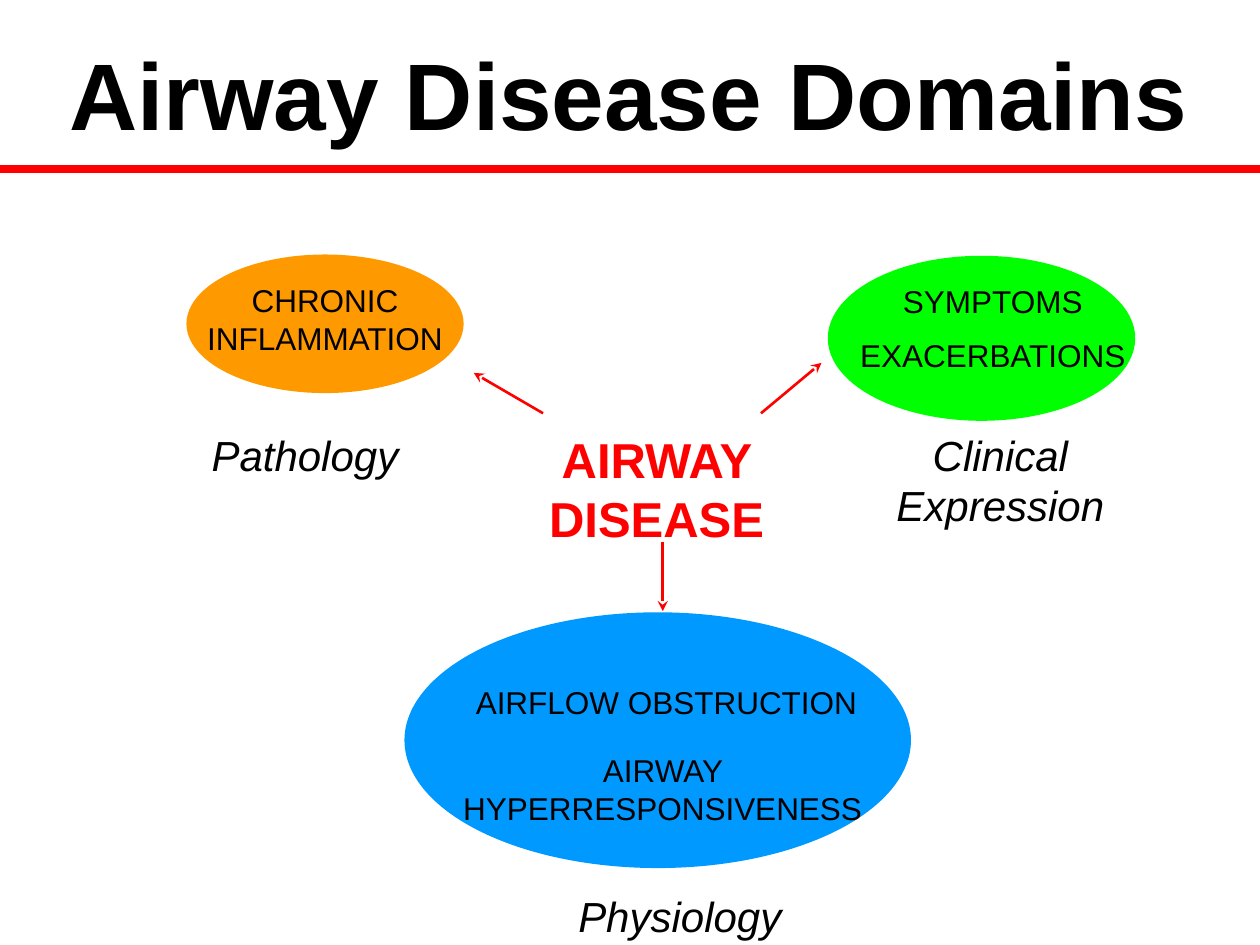
from dataclasses import dataclass

from lxml.etree import SubElement
from pptx import Presentation
from pptx.dml.color import RGBColor as RGB
from pptx.enum.shapes import MSO_CONNECTOR as CONNECTOR, MSO_SHAPE as SHAPE
from pptx.enum.text import MSO_ANCHOR as ANCHOR, MSO_AUTO_SIZE as AUTO, PP_ALIGN as ALIGN
from pptx.oxml.ns import qn
from pptx.util import Inches, Pt


@dataclass(frozen=True)
class Theme:
    font: str = "Arial"
    ink: RGB = RGB(0, 0, 0)
    accent: RGB = RGB(255, 0, 0)
    pathology: RGB = RGB(255, 153, 0)
    physiology: RGB = RGB(0, 153, 255)
    clinical: RGB = RGB(0, 255, 0)
    title: int = 54
    hub: int = 28
    caption: int = 24
    body: int = 18
    rule: float = 4.5
    arrow: float = 1.5


class DomainSlide:
    def __init__(self, slide, theme):
        self.slide = slide
        self.theme = theme

    def text(self, box, paragraphs, size, color=None, bold=False, italic=False,
             align=ALIGN.CENTER, parent=None):
        shapes = (parent or self.slide).shapes
        frame = shapes.add_textbox(*map(Inches, box)).text_frame
        frame.word_wrap = True
        frame.auto_size = AUTO.SHAPE_TO_FIT_TEXT
        frame.text = "\n".join(paragraphs)
        for index, paragraph in enumerate(frame.paragraphs):
            paragraph.alignment = align
            if index:
                paragraph.space_before = Pt(size / 2)
            font = paragraph.font
            font.name, font.size = self.theme.font, Pt(size)
            font.bold, font.italic = bold, italic
            font.color.rgb = color or self.theme.ink
        return frame

    def title(self, box, words):
        frame = self.text(box, [words], self.theme.title, bold=True, align=ALIGN.LEFT)
        frame.auto_size = AUTO.NONE
        frame.vertical_anchor = ANCHOR.BOTTOM
        frame.paragraphs[0].line_spacing = 0.75

    def line(self, start, end, width, arrow=False):
        line = self.slide.shapes.add_connector(
            CONNECTOR.STRAIGHT, *map(Inches, (*start, *end)))
        line.line.color.rgb = self.theme.accent
        line.line.width = Pt(width)
        if arrow:
            SubElement(line.line._get_or_add_ln(), qn("a:tailEnd"), type="stealth")
        SubElement(line._element.spPr, qn("a:effectLst"))

    def domain(self, oval_box, color, labels, caption_box, caption):
        """Group an oval, its (box, paragraphs) labels and its caption."""
        group = self.slide.shapes.add_group_shape()
        oval = group.shapes.add_shape(SHAPE.OVAL, *map(Inches, oval_box))
        oval.shadow.inherit = False
        oval.fill.solid()
        oval.fill.fore_color.rgb = color
        oval.line.fill.background()
        for box, paragraphs in labels:
            self.text(box, paragraphs, self.theme.body, parent=group)
        self.text(caption_box, [caption], self.theme.caption, italic=True, parent=group)


def main():
    deck = Presentation()
    deck.slide_width, deck.slide_height = Inches(10), Inches(7.5)
    theme = Theme()
    page = DomainSlide(deck.slides.add_slide(deck.slide_layouts[6]), theme)

    # Title and rule
    page.line((0, 1.34), (10, 1.34), theme.rule)
    page.title((0.45, 0.3, 9.82, 0.92), "Airway Disease Domains")

    # Central topic
    page.text((4.07, 3.36, 2.28, 1.04), ["AIRWAY DISEASE"], theme.hub,
              theme.accent, bold=True)

    # Three domains
    page.domain((1.48, 2.02, 2.2, 1.1), theme.pathology,
                [((1.48, 2.18, 2.2, 0.7), ["CHRONIC INFLAMMATION"])],
                (1.56, 3.36, 1.72, 0.51), "Pathology")
    page.domain((3.21, 4.86, 4.02, 2.03), theme.physiology,
                [((3.52, 5.37, 3.54, 0.4), ["AIRFLOW OBSTRUCTION"]),
                 ((3.29, 5.91, 3.94, 0.71), ["AIRWAY HYPERRESPONSIVENESS"])],
                (4.39, 7.02, 2.01, 0.5), "Physiology")
    page.domain((6.57, 2.03, 2.44, 1.31), theme.clinical,
                [((6.7, 2.19, 2.36, 0.86), ["SYMPTOMS", "EXACERBATIONS"])],
                (6.91, 3.36, 2.06, 0.91), "Clinical Expression")

    # Arrows from the topic to each domain
    for start, end in [((4.31, 3.28), (3.76, 2.96)),
                       ((6.04, 3.28), (6.52, 2.88)),
                       ((5.26, 4.3), (5.26, 4.85))]:
        page.line(start, end, theme.arrow, arrow=True)

    deck.save("out.pptx")


if __name__ == "__main__":
    main()
